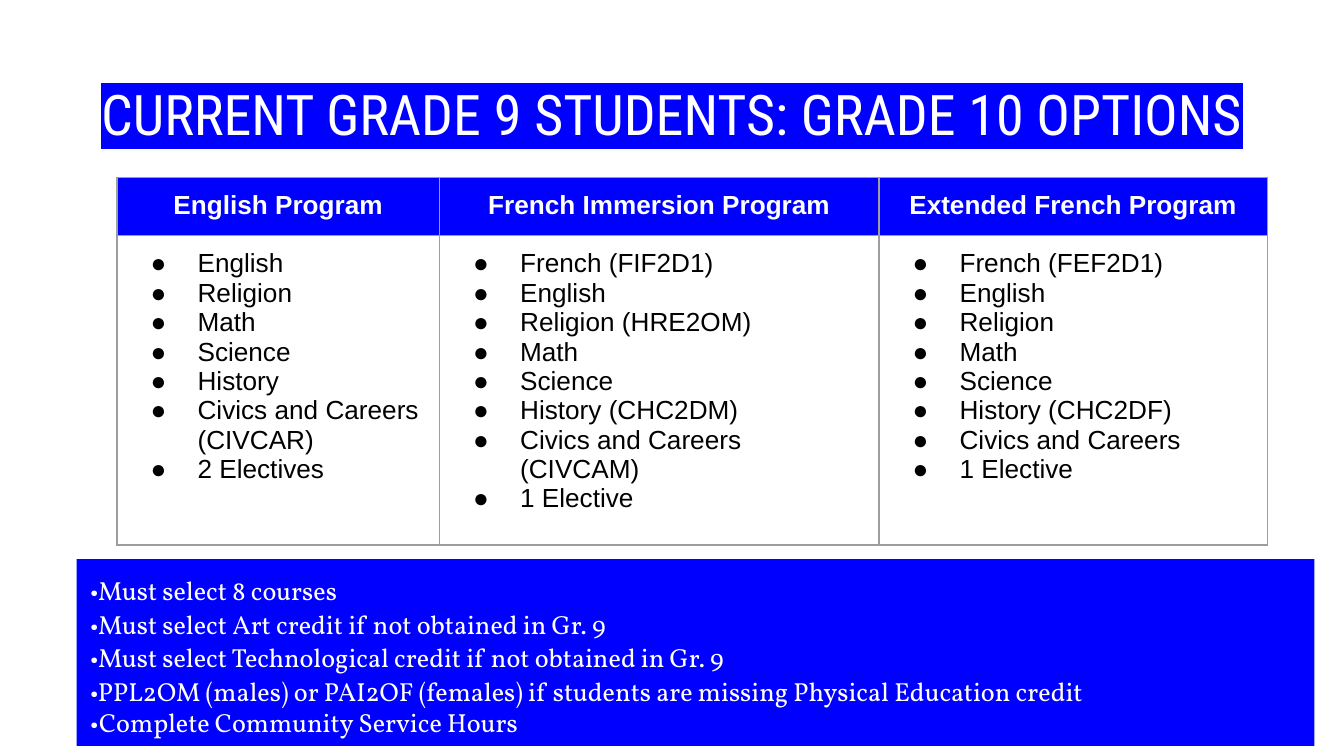
"""Build a slide of Grade 10 course options for each program."""
from lxml import etree
from pptx import Presentation, util as u
from pptx.dml.color import RGBColor
from pptx.enum import shapes, text
from pptx.oxml.ns import qn

HUES = {"blue": "0000FF", "white": "FFFFFF", "black": "000000", "grey": "9E9E9E"}
TITLE = "CURRENT GRADE 9 STUDENTS: GRADE 10 OPTIONS"
PLANS = [
    ("English Program", 2.4,
     ["English", "Religion", "Math", "Science", "History",
      "Civics and Careers", "(CIVCAR)", "2 Electives"]),
    ("French Immersion Program", 3.27,
     ["French (FIF2D1)", "English", "Religion (HRE2OM)", "Math", "Science",
      "History (CHC2DM)", "Civics and Careers (CIVCAM)", "1 Elective"]),
    ("Extended French Program", 2.89,
     ["French (FEF2D1)", "English", "Religion", "Math", "Science",
      "History (CHC2DF)", "Civics and Careers", "1 Elective"]),
]
ROWS = [0.4, 2.11]
RULES = [
    "•Must select 8 courses",
    "•Must select Art credit if not obtained in Gr. 9",
    "•Must select Technological credit if not obtained in Gr. 9",
    "•PPL2OM (males) or PAI2OF (females) if students are missing Physical Education credit",
    "•Complete Community Service Hours",
]
FONTS = {
    "title": {"name": "Roboto Condensed", "size": u.Pt(30)},
    "head": {"name": "Arial", "size": u.Pt(14), "bold": True},
    "body": {"name": "Arial", "size": u.Pt(14), "bold": False},
    "rules": {"name": "Vollkorn", "size": u.Pt(14)},
}
PAD = {"margin_" + side: u.Inches(0.1) for side in ("left", "right", "top", "bottom")}


def apply(item, vals):
    for key, val in vals.items():
        setattr(item, key, val)


def paint(fill, hue):
    fill.solid()
    fill.fore_color.rgb = RGBColor.from_string(HUES[hue])


def tint(node, tag, hue):
    part = etree.SubElement(node, qn(tag))
    etree.SubElement(part, qn("a:srgbClr"), val=HUES[hue])
    return part


def write(frame, lines, style, hue, align):
    frame.word_wrap = True
    for i, line in enumerate(lines):
        para = frame.paragraphs[0] if i == 0 else frame.add_paragraph()
        para.alignment = align
        run = para.add_run()
        run.text = line
        apply(run.font, FONTS[style])
        run.font.color.rgb = RGBColor.from_string(HUES[hue])
        size = str(int(FONTS[style]["size"].pt * 100))
        etree.SubElement(para._p, qn("a:endParaRPr"), sz=size)
    return frame.paragraphs


def bullet(para):
    props = para._p.get_or_add_pPr()
    props.set("marL", str(u.Inches(0.5)))
    if para.text.startswith("("):
        props.set("indent", "0")
        return
    props.set("indent", str(u.Inches(-0.35)))
    tint(props, "a:buClr", "black")
    etree.SubElement(props, qn("a:buSzPts"), val="1400")
    etree.SubElement(props, qn("a:buFont"), typeface="Arial")
    etree.SubElement(props, qn("a:buChar"), char="●")


def border(cell):
    props = cell._tc.get_or_add_tcPr()
    for side in "LRTB":
        line = etree.SubElement(props, qn("a:ln" + side), w=str(u.Pt(0.75)))
        tint(line, "a:solidFill", "grey")


def box(slide, *place):
    shape = slide.shapes.add_shape(shapes.MSO_SHAPE.RECTANGLE, *map(u.Inches, place))
    shape.shadow.inherit = False
    shape.line.fill.background()
    paint(shape.fill, "blue")
    return shape


def main():
    left, mid = text.PP_ALIGN.LEFT, text.PP_ALIGN.CENTER
    deck = Presentation()
    wide = u.Inches(10)
    apply(deck, {"slide_width": wide, "slide_height": wide * 9 // 16})
    slide = deck.slides.add_slide(deck.slide_layouts[6])

    title = slide.shapes.add_textbox(*map(u.Inches, (0.34, 0.49, 9.32, 0.63))).text_frame
    apply(title, PAD)
    run = write(title, [TITLE], "title", "white", mid)[0].runs[0]
    mark = tint(run._r.get_or_add_rPr(), "a:highlight", "blue")
    run._r.rPr.find(qn("a:solidFill")).addnext(mark)

    span = sum(plan[1] for plan in PLANS)
    place = map(u.Inches, (0.87, 1.32, span, sum(ROWS)))
    table = slide.shapes.add_table(len(ROWS), len(PLANS), *place).table
    for row, high in zip(table.rows, ROWS):
        row.height = u.Inches(high)
    for col, (name, width, items) in enumerate(PLANS):
        table.columns[col].width = u.Inches(width)
        head, body = table.cell(0, col), table.cell(1, col)
        for cell in (head, body):
            apply(cell, PAD)
            border(cell)
        paint(head.fill, "blue")
        body.fill.background()
        write(head.text_frame, [name], "head", "white", mid)
        for para in write(body.text_frame, items, "body", "black", left):
            bullet(para)

    frame = box(slide, 0.57, 4.16, 9.21, 1.39).text_frame
    apply(frame, {**PAD, "vertical_anchor": text.MSO_ANCHOR.TOP})
    for para in write(frame, RULES, "rules", "white", left)[:-1]:
        para.line_spacing = 1.07
    deck.save("out.pptx")


if __name__ == "__main__":
    main()
